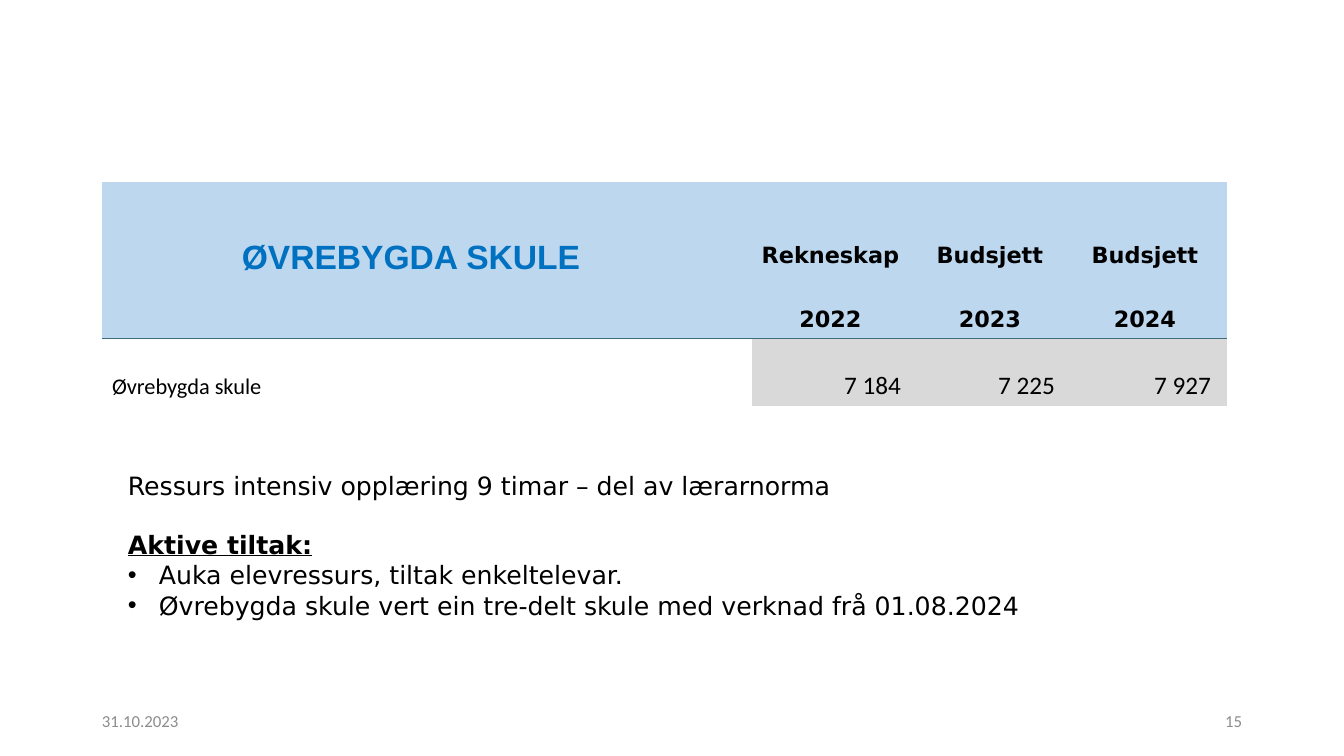
from lxml import etree
from pptx import Presentation
from pptx import util as u
from pptx.dml.color import RGBColor
from pptx.enum import text
from pptx.oxml import ns

BLACK = RGBColor(0x00, 0x00, 0x00)
GREY = RGBColor(0x8C, 0x8C, 0x8C)
BLUE = RGBColor(0x00, 0x70, 0xC0)
HEADER_FILL = RGBColor(0xBD, 0xD7, 0xEE)
VALUE_FILL = RGBColor(0xD9, 0xD9, 0xD9)
RULE = RGBColor(0x40, 0x6D, 0x7B)

NO_GRID_STYLE = "{2D5ABB26-0587-4C30-8999-92F81FD0307C}"
LEFT, CENTER, RIGHT = text.PP_ALIGN.LEFT, text.PP_ALIGN.CENTER, text.PP_ALIGN.RIGHT
TOP, MIDDLE, BOTTOM = text.MSO_ANCHOR.TOP, text.MSO_ANCHOR.MIDDLE, text.MSO_ANCHOR.BOTTOM

COLUMNS = [650, 165, 154, 156]
ROWS = [92, 64, 68]
BUDGET = [
    ["", "Rekneskap", "Budsjett", "Budsjett"],
    ["", "2022", "2023", "2024"],
    ["Øvrebygda skule", "7 184", "7 225", "7 927"],
]
MEASURES = [
    "Auka elevressurs, tiltak enkeltelevar.",
    "Øvrebygda skule vert ein tre-delt skule med verknad frå 01.08.2024",
]


def px(count):
    """Turn whole pixels into EMU."""
    return u.Emu(round(count * 914400 / 100.8))


def style(para, font, size, color, bold=False, align=LEFT):
    """Format a paragraph and its runs."""
    para.alignment = align
    for span in para.runs:
        span.font.name = font
        span.font.size = u.Pt(size)
        span.font.bold = bold
        span.font.color.rgb = color


def add_text(page, box, lines, anchor=TOP):
    """Place a text box with one paragraph per line and return its paragraphs."""
    frame = page.shapes.add_textbox(*map(px, box)).text_frame
    frame.word_wrap = True
    frame.vertical_anchor = anchor
    frame.text = "\n".join(lines)
    return frame.paragraphs


def add_rule(cell, side):
    """Draw a thin rule on one side of a table cell."""
    line = etree.Element(ns.qn(f"a:{side}"), w=str(u.Pt(0.75)))
    fill = etree.SubElement(line, ns.qn("a:solidFill"))
    etree.SubElement(fill, ns.qn("a:srgbClr"), val=str(RULE))
    cell._tc.get_or_add_tcPr().insert(0, line)


def add_bullet(para):
    """Give a paragraph a hanging round bullet."""
    props = para._p.get_or_add_pPr()
    props.set("marL", str(px(31)))
    props.set("indent", str(-px(31)))
    etree.SubElement(props, ns.qn("a:buFont"), typeface="Arial")
    etree.SubElement(props, ns.qn("a:buChar"), char="•")


def fill_cell(cell, row, column, value):
    """Write and format one budget cell."""
    header = row < 2
    cell.vertical_anchor = BOTTOM
    cell.text = value
    para = cell.text_frame.paragraphs[0]
    if header:
        cell.margin_left, cell.margin_right = px(0), px(8)
        style(para, "DejaVu Sans", 16, BLACK, True, CENTER)
    elif column:
        cell.margin_right = px(16)
        style(para, "Calibri", 18, BLACK, align=RIGHT)
    else:
        style(para, "Calibri", 16, BLACK)
    if header or column:
        cell.fill.solid()
        cell.fill.fore_color.rgb = HEADER_FILL if header else VALUE_FILL
    else:
        cell.fill.background()
    if row:
        add_rule(cell, "lnB" if header else "lnT")


def add_budget(page, left, top):
    """Place the budget table with the school name over its header."""
    box = (left, top, sum(COLUMNS), sum(ROWS))
    table = page.shapes.add_table(len(ROWS), len(COLUMNS), *map(px, box)).table
    table.first_row = table.horz_banding = False
    table._tbl.tblPr.find(ns.qn("a:tableStyleId")).text = NO_GRID_STYLE
    for column, width in zip(table.columns, COLUMNS):
        column.width = px(width)
    for row, height in zip(table.rows, ROWS):
        row.height = px(height)
    for row, values in enumerate(BUDGET):
        for column, value in enumerate(values):
            fill_cell(table.cell(row, column), row, column, value)
    title = add_text(page, (left, top + 49, 618, 54), ["ØVREBYGDA SKULE"])[0]
    style(title, "Arial", 24, BLUE, True, CENTER)


def add_measures(page, box):
    """Place the resource note and the bulleted measures."""
    lines = ["Ressurs intensiv opplæring 9 timar – del av lærarnorma", "Aktive tiltak:"]
    paras = add_text(page, box, lines + MEASURES)
    heading = paras[1]
    heading.space_before = u.Pt(21)
    for para in paras[2:]:
        add_bullet(para)
    for para in paras:
        style(para, "DejaVu Sans", 18, BLACK, para is heading)
    heading.runs[0].font.underline = True


def add_footer(page, left, top, right):
    """Place the date and the page number at the two ends of the footer."""
    for start, value, align in [(left, "31.10.2023", LEFT), (right - 302, "15", RIGHT)]:
        para = add_text(page, (start, top, 302, 40), [value], MIDDLE)[0]
        style(para, "Calibri", 12, GREY, align=align)


def main():
    """Build the budget slide."""
    deck = Presentation()
    deck.slide_width, deck.slide_height = px(1344), px(756)
    page = deck.slides.add_slide(deck.slide_layouts[6])
    add_footer(page, 92, 701, 1252)
    add_budget(page, 102, 182)
    add_measures(page, (118, 465, 1125, 224))
    deck.save("out.pptx")


if __name__ == "__main__":
    main()
